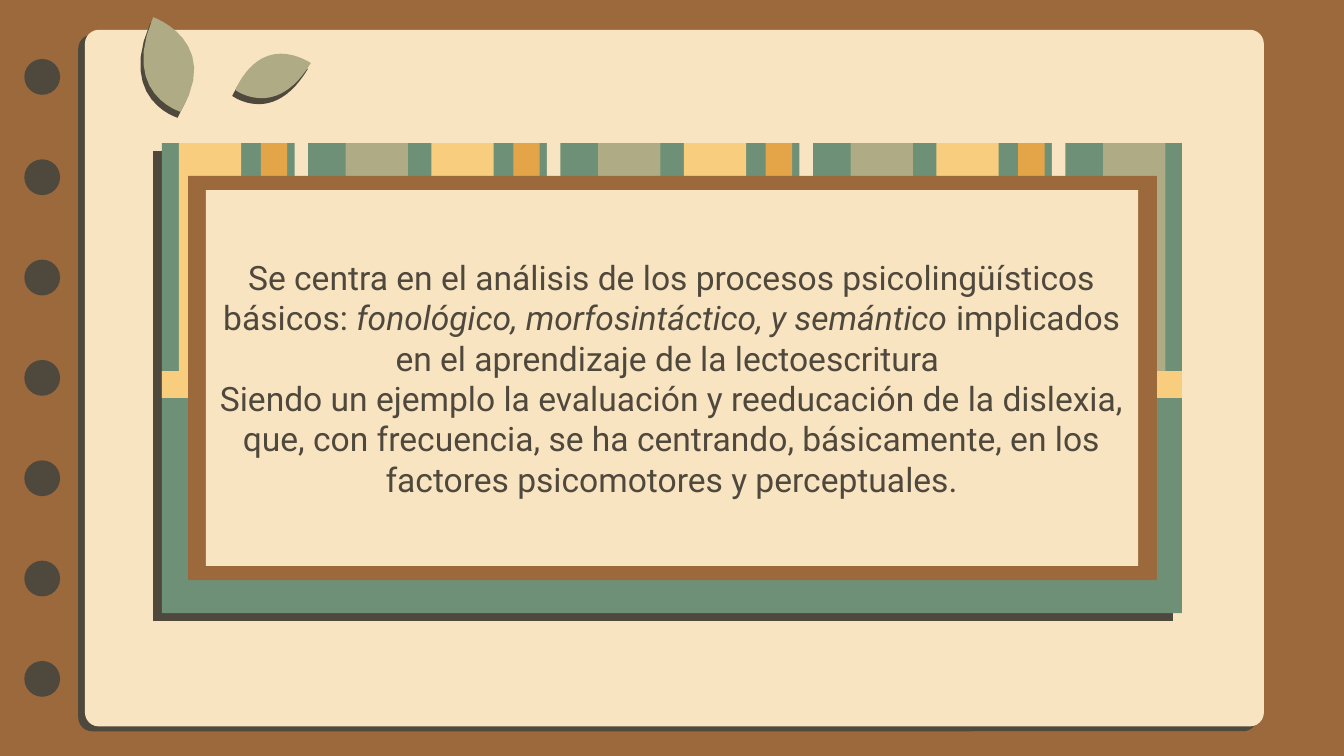
from pptx import Presentation
from pptx import util as u
from pptx.dml.color import RGBColor
from pptx.enum import shapes, text

# Content
PARAGRAPHS = [
    [("Se centra en el análisis de los procesos psicolingüísticos básicos: ", False),
     ("fonológico, morfosintáctico, y semántico ", True),
     ("implicados en el aprendizaje de la lectoescritura ", False)],
    [("Siendo un ejemplo la evaluación y reeducación de la dislexia, que, con "
      "frecuencia, se ha centrando, básicamente, en los factores psicomotores "
      "y perceptuales.", False)],
]

# Colours
BROWN, DARK, CREAM = "9C693D", "4F493D", "F9E4C2"
GREEN, SAGE, YELLOW, ORANGE = "6E9077", "AFAB85", "F8CD7D", "E4A448"

# Geometry in points: left, top, width, height
CARD = (45.5, 16, 631.6, 373.2)
CARD_SHADOW = (-3.6, 2.6)
HOLE_COUNT, HOLE_PITCH = 7, 53.75
HOLE_LEFT, HOLE_TOP, HOLE_SIZE = 13, 31.6, 19.2
PANEL = (86.8, 76.7, 546.4, 251.8)
PANEL_SHADOW = (-4.8, 4.2)
STRIPE_REPEATS, STRIPE_PITCH, STRIPE_HEIGHT = 4, 135.25, 134
STRIPES = [  # left in the first repeat, width, colour
    (185.2, 33.4, SAGE),
    (95.9, 33.4, YELLOW),
    (139.7, 14.2, ORANGE),
    (157.8, 7.2, CREAM),
]
BAND = (86.8, 198.8, 546.4, 14.4)
FRAME = (100.8, 94.3, 519, 216.5)
INSET = (110.3, 101.8, 499.5, 201.4)
BODY = (110, 154.6, 499.6, 95.8)
LEAF_SHADOW = (-1.6, 3.2)
LEAVES = [  # start point, then cubic curves (control, control, end)
    ((150.5, 28.8), [
        ((142.6, 28.8), (133.2, 33.1), (126, 48.2)),
        ((126, 48.2), (131.8, 52.6), (140.2, 52.6)),
        ((147.6, 52.6), (157.4, 49), (166.5, 33.8)),
        ((166.5, 33.8), (159.1, 28.8), (150.5, 28.8))]),
    ((82.1, 9.2), [
        ((64.4, 50.4), (96.8, 59.9), (96.8, 59.9)),
        ((119.4, 22.3), (82.1, 9.2), (82.1, 9.2))]),
]
CURVE_STEPS = 12


def rgb(value):
    return RGBColor.from_string(value)


def paint(shape, color):
    shape.shadow.inherit = False
    shape.fill.solid()
    shape.fill.fore_color.rgb = rgb(color)
    shape.line.fill.background()


def add_part(page, kind, area, color, offset=(0, 0)):
    left, top, width, height = area
    lengths = (left + offset[0], top + offset[1], width, height)
    shape = page.shapes.add_shape(kind, *map(u.Pt, lengths))
    paint(shape, color)
    return shape


def curve_points(start, curves):
    points = [start]
    for first, second, end in curves:
        controls = (points[-1], first, second, end)
        for step in range(1, CURVE_STEPS + 1):
            t = step / CURVE_STEPS
            weights = ((1 - t) ** 3, 3 * t * (1 - t) ** 2, 3 * t * t * (1 - t), t ** 3)
            points.append(tuple(sum(w * c[axis] for w, c in zip(weights, controls))
                                for axis in (0, 1)))
    return points


def add_leaf(page, leaf, color, offset=(0, 0)):
    points = [(u.Pt(x + offset[0]), u.Pt(y + offset[1])) for x, y in curve_points(*leaf)]
    builder = page.shapes.build_freeform(*points[0])
    builder.add_line_segments(points[1:], close=True)
    paint(builder.convert_to_shape(), color)


def add_body(page):
    box = page.shapes.add_textbox(*map(u.Pt, BODY))
    frame = box.text_frame
    settings = {"word_wrap": True, "vertical_anchor": text.MSO_ANCHOR.MIDDLE}
    settings.update({f"margin_{side}": u.Pt(7.2)
                     for side in ("left", "top", "right", "bottom")})
    for name, value in settings.items():
        setattr(frame, name, value)
    for index, runs in enumerate(PARAGRAPHS):
        para = frame.add_paragraph() if index else frame.paragraphs[0]
        para.alignment = text.PP_ALIGN.CENTER
        for words, italic in runs:
            span = para.add_run()
            span.text = words
            style = {"name": "Roboto", "size": u.Pt(18), "italic": italic}
            for name, value in style.items():
                setattr(span.font, name, value)
            span.font.color.rgb = rgb(DARK)


def main():
    deck = Presentation()
    deck.slide_width, deck.slide_height = u.Pt(720), u.Pt(405)
    page = deck.slides.add_slide(deck.slide_layouts[6])
    page.background.fill.solid()
    page.background.fill.fore_color.rgb = rgb(BROWN)
    rectangle = shapes.MSO_SHAPE.RECTANGLE

    # Notebook card and binder holes
    for color, offset in ((DARK, CARD_SHADOW), (CREAM, (0, 0))):
        card = add_part(page, shapes.MSO_SHAPE.ROUNDED_RECTANGLE, CARD, color, offset)
        card.adjustments[0] = 0.02
    for index in range(HOLE_COUNT):
        area = (HOLE_LEFT, HOLE_TOP + index * HOLE_PITCH, HOLE_SIZE, HOLE_SIZE)
        add_part(page, shapes.MSO_SHAPE.OVAL, area, DARK)

    # Striped panel over its shadow
    add_part(page, rectangle, PANEL, DARK, PANEL_SHADOW)
    add_part(page, rectangle, PANEL, GREEN)
    for repeat in range(STRIPE_REPEATS):
        for left, width, color in STRIPES:
            area = (left + repeat * STRIPE_PITCH, PANEL[1], width, STRIPE_HEIGHT)
            add_part(page, rectangle, area, color)
    add_part(page, rectangle, BAND, YELLOW)

    # Framed text
    add_part(page, rectangle, FRAME, BROWN)
    add_part(page, rectangle, INSET, CREAM)
    add_body(page)

    # Leaves
    for leaf in LEAVES:
        add_leaf(page, leaf, DARK, LEAF_SHADOW)
        add_leaf(page, leaf, SAGE)

    deck.save("out.pptx")


if __name__ == "__main__":
    main()
